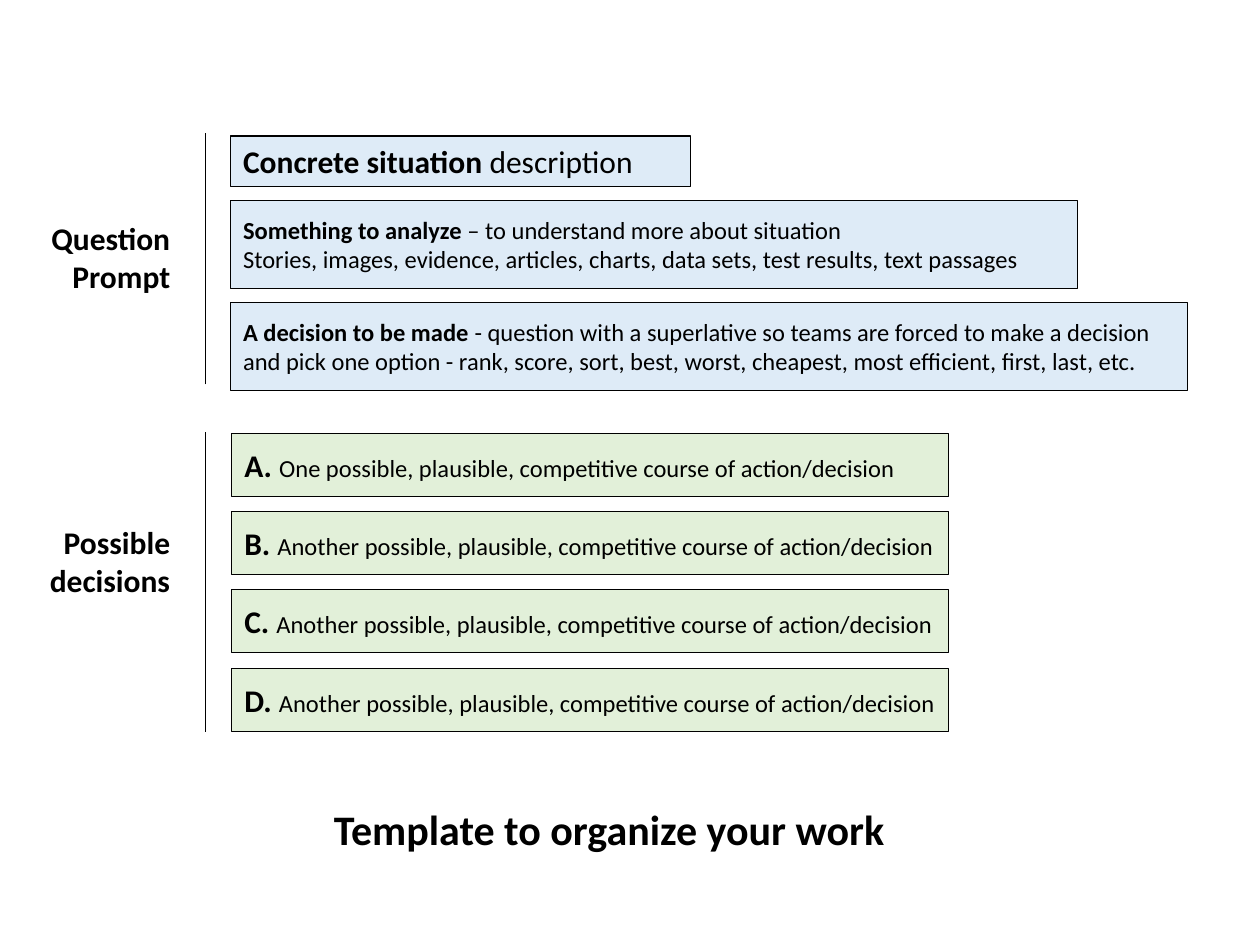
"""Build a slide with a template for a question prompt and its possible decisions."""
from lxml.etree import SubElement
from pptx import Presentation
from pptx.dml.color import RGBColor
from pptx.enum.shapes import MSO_CONNECTOR as CONN, MSO_SHAPE as SHAPE
from pptx.enum.text import MSO_ANCHOR as ANCHOR, MSO_AUTO_SIZE as FIT, PP_ALIGN as ALIGN
from pptx.oxml.ns import qn
from pptx.util import Pt

BLACK = RGBColor(0, 0, 0)
BLUE = RGBColor(0xDE, 0xEB, 0xF7)
GREEN = RGBColor(0xE2, 0xF0, 0xD9)
FONT = "Calibri"

TITLE = "Template to organize your work"
PROMPTS = [
    (77.8, 262.8, 28.8, 0.75, 18, [[("Concrete situation ", 18, True), ("description", 18, False)]]),
    (114.5, 483.8, 50.4, 0.5, 14, [
        [("Something to analyze ", 14, True), ("– to understand more about situation", 14, False)],
        [("Stories, images, evidence, articles, charts, data sets, test results, text passages", 14, False)],
    ]),
    (172.8, 546.5, 50.4, 0.5, 14, [
        [("A decision to be made ", 14, True),
         ("- question with a superlative so teams are forced to make a decision and pick one option"
          " - rank, score, sort, best, worst, cheapest, most efficient, first, last, etc.", 14, False)],
    ]),
]
OPTIONS = [("A. ", "One"), ("B. ", "Another"), ("C. ", "Another"), ("D. ", "Another")]
OPTION_TEXT = " possible, plausible, competitive course of action/decision"
GROUPS = [
    (["Question", "Prompt"], 121.7, 76.3, 219.6),
    (["Possible decisions"], 295.2, 247, 418.3),
]
PROMPT_X, OPTION_X, RULE_X = 131.8, 132.5, 117.4
OPTION_Y, OPTION_PITCH, OPTION_W, OPTION_H = 247.7, 44.7, 409.7, 36


def write(sp, paragraphs, align=ALIGN.LEFT, anchor=ANCHOR.TOP):
    tf = sp.text_frame
    tf.word_wrap = True
    tf.auto_size = FIT.NONE
    tf.vertical_anchor = anchor
    for i, runs in enumerate(paragraphs):
        p = tf.add_paragraph() if i else tf.paragraphs[0]
        p.alignment = align
        for text, size, bold in runs:
            r = p.add_run()
            r.text = text
            r.font.name, r.font.size, r.font.bold = FONT, Pt(size), bold
            r.font.color.rgb = BLACK


def add_box(slide, x, y, w, h, fill, line, paragraphs):
    s = slide.shapes.add_shape(SHAPE.RECTANGLE, Pt(x), Pt(y), Pt(w), Pt(h))
    s.shadow.inherit = False
    s.fill.solid()
    s.fill.fore_color.rgb = fill
    s.line.color.rgb = BLACK
    s.line.width = Pt(line)
    write(s, paragraphs, anchor=ANCHOR.MIDDLE)


def add_group(slide, lines, label_y, top, bottom):
    rule = slide.shapes.add_connector(CONN.STRAIGHT, Pt(RULE_X), Pt(bottom), Pt(RULE_X), Pt(top))
    rule.line.color.rgb = BLACK
    rule.line.width = Pt(1)
    SubElement(rule._element.spPr, qn("a:effectLst"))
    label = slide.shapes.add_textbox(Pt(18), Pt(label_y), Pt(86.4), Pt(51))
    write(label, [[(line, 18, True)] for line in lines], align=ALIGN.RIGHT)


def main():
    prs = Presentation()
    prs.slide_width, prs.slide_height = Pt(720), Pt(540)
    slide = prs.slides.add_slide(prs.slide_layouts[5])

    title = slide.shapes.title
    title.left, title.top, title.width, title.height = Pt(72), Pt(455.8), Pt(552.2), Pt(36)
    write(title, [[(TITLE, 24, True)]], align=ALIGN.CENTER)

    for y, w, h, line, size, paragraphs in PROMPTS:
        add_box(slide, PROMPT_X, y, w, h, BLUE, line, paragraphs)
    for i, (letter, start) in enumerate(OPTIONS):
        runs = [(letter, 18, True), (start + OPTION_TEXT, 14, False)]
        add_box(slide, OPTION_X, OPTION_Y + i * OPTION_PITCH, OPTION_W, OPTION_H, GREEN, 0.5, [runs])
    for group in GROUPS:
        add_group(slide, *group)

    prs.save("out.pptx")


if __name__ == "__main__":
    main()
